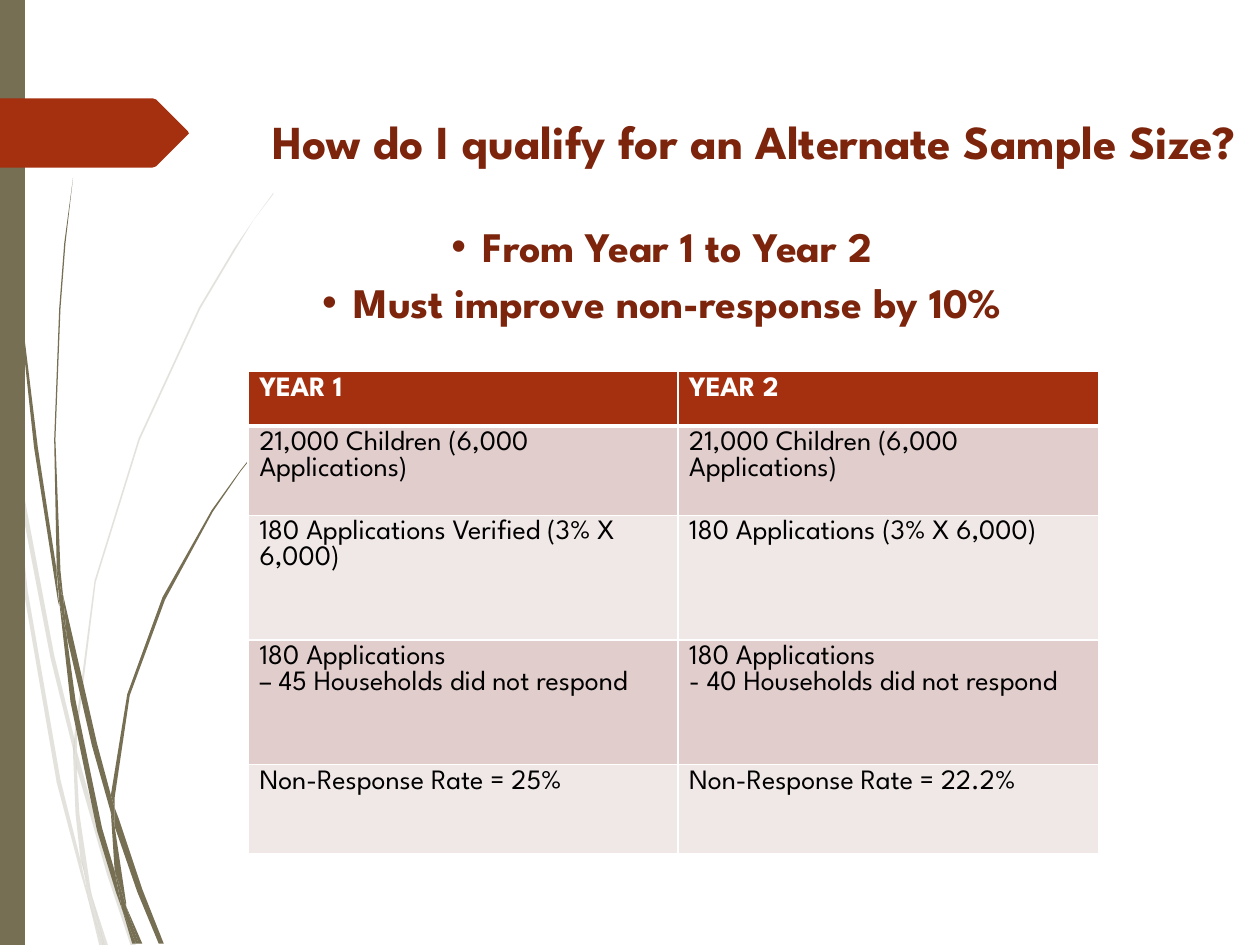
import pptx
import pptx.util
import pptx.dml.color
import pptx.enum.text
import pptx.oxml
import pptx.oxml.ns

PX = 9144  # one px is a hundredth of an inch

THEME = {
    "font": "League Spartan",
    "title": 27, "list": 24, "cell": 16,
    "olive": "766F54", "rust": "A53010", "dark": "7C240C",
    "white": "FFFFFF", "black": "000000",
    "bands": ("E1CDCC", "F0E8E7"),
}

# Content
TITLE = "How do I qualify for an Alternate Sample Size?"
POINTS = ["From Year 1 to Year 2", "Must improve non-response by 10%"]
ROWS = [
    ("YEAR 1", "YEAR 2"),
    ("21,000 Children (6,000 Applications)",
     "21,000 Children (6,000 Applications)"),
    ("180 Applications Verified (3% X 6,000)", "180 Applications (3% X 6,000)"),
    ("180 Applications\n– 45 Households did not respond",
     "180 Applications\n- 40 Households did not respond"),
    ("Non-Response Rate = 25%", "Non-Response Rate = 22.2%"),
]

# Layout: left, top, width, height
TITLE_BOX = (100, 72, 891, 167)
LIST_BOX = (208, 136, 648, 167)
GRID_AT = (197, 295)
COLS = (341, 334)
HEIGHTS = (43, 71, 99, 99, 71)
BAR = [(0, 0), (20, 0), (20, 750), (0, 750)]
ARROW = [(0, 78), (121, 78), (124, 79), (149, 104), (150, 105.5),
         (149, 107), (124, 132), (121, 133), (0, 133)]

# Outlines of the grass blades, by knots
PALE = [
    [(8, 350), (6, 322), (0, 282), (0, 299), (7, 344)],
    [(40, 522), (59, 599), (59, 586), (43, 520), (10, 345), (12, 376)],
    [(64, 607), (61, 596), (61, 610), (85, 694), (104, 751), (108, 751),
     (88, 692)],
    [(83, 751), (86, 751), (73, 711)],
    [(64, 683), (48, 619), (22, 469), (12, 376), (8, 350), (19, 470),
     (45, 621), (64, 693), (70, 714), (69, 707)],
    [(58, 599), (60, 646), (64, 683), (67, 692), (73, 711), (72, 706),
     (63, 646), (61, 610), (61, 608)],
    [(61, 584), (76, 462), (111, 349), (159, 245), (187, 198), (201, 175),
     (217, 154), (217, 153), (201, 175), (186, 197), (158, 244), (110, 348),
     (75, 461), (59, 584), (59, 586), (61, 596)],
    [(70, 714), (79, 751), (82, 751)],
    [(61, 608), (61, 610), (61, 596), (59, 586), (58, 599)],
    [(67, 692), (65, 683), (69, 707), (70, 714), (82, 751), (83, 751),
     (73, 711)],
]
DEEP = [
    [(5, 110), (14, 233), (27, 355), (46, 477), (47, 481), (45, 457),
     (45, 453), (30, 355), (15, 232), (6, 109), (4, 48), (3, 0), (2, 0),
     (3, 48)],
    [(73, 592), (88, 645), (88, 633), (88, 631), (77, 590), (50, 472),
     (53, 505)],
    [(94, 649), (91, 641), (91, 656), (109, 708), (126, 749), (130, 749),
     (113, 706)],
    [(91, 691), (81, 657), (60, 556), (53, 505), (47, 477), (56, 557),
     (77, 659), (92, 708), (97, 722), (96, 717)],
    [(50, 472), (48, 453), (44, 349), (48, 245), (52, 193), (58, 141),
     (51, 193), (47, 245), (43, 349), (45, 449), (49, 472)],
    [(110, 749), (113, 749), (100, 719)],
    [(47, 477), (53, 505), (50, 472), (49, 472), (45, 449), (45, 453)],
    [(91, 633), (103, 552), (131, 476), (169, 406), (191, 374), (203, 359),
     (216, 344), (215, 344), (203, 358), (191, 373), (168, 405), (129, 474),
     (101, 551), (88, 631), (91, 641)],
    [(97, 722), (105, 749), (108, 749)],
    [(88, 645), (91, 691), (96, 706), (100, 719), (100, 716), (91, 656),
     (90, 651)],
    [(88, 645), (90, 651), (91, 656), (91, 641), (88, 631), (88, 633)],
    [(96, 706), (91, 691), (96, 717), (97, 722), (108, 749), (110, 749),
     (100, 719)],
]


def rgb(code):
    return pptx.dml.color.RGBColor.from_string(code)


def xml(tag, attrs="", inner=""):
    space = pptx.oxml.ns.nsdecls("a")
    return pptx.oxml.parse_xml(f"<a:{tag} {space} {attrs}>{inner}</a:{tag}>")


def outline(slide, knots, color, alpha=None):
    pen = slide.shapes.build_freeform(*knots[0], scale=PX)
    pen.add_line_segments(knots[1:], close=True)
    shape = pen.convert_to_shape()
    shape.shadow.inherit = False
    shape.line.fill.background()
    shape.fill.solid()
    shape.fill.fore_color.rgb = rgb(color)
    if alpha:
        tint = shape.fill._xPr.find(".//" + pptx.oxml.ns.qn("a:srgbClr"))
        tint.append(xml("alpha", f'val="{alpha * 1000}"'))


def place(shape, box):
    shape.left, shape.top, shape.width, shape.height = (n * PX for n in box)


def style(para, size, color, bold=True):
    for run in para.runs:
        font = run.font
        font.name, font.size, font.bold = (
            THEME["font"], pptx.util.Pt(size), bold)
        font.color.rgb = rgb(color)


def add_title(slide):
    shape = slide.shapes.title
    place(shape, TITLE_BOX)
    frame = shape.text_frame
    frame.text = TITLE
    frame.word_wrap = True
    frame.vertical_anchor = pptx.enum.text.MSO_ANCHOR.TOP
    frame.margin_top = 17 * PX
    para = frame.paragraphs[0]
    para.alignment = pptx.enum.text.PP_ALIGN.RIGHT
    style(para, THEME["title"], THEME["dark"])


def add_list(slide):
    shape = slide.placeholders[1]
    place(shape, LIST_BOX)
    frame = shape.text_frame
    frame.text = "\n".join(POINTS)
    frame.vertical_anchor = pptx.enum.text.MSO_ANCHOR.MIDDLE
    for para in frame.paragraphs:
        para.alignment = pptx.enum.text.PP_ALIGN.CENTER
        para.line_spacing = 0.9
        para.space_before = pptx.util.Pt(0)
        para.space_after = pptx.util.Pt(6)
        props = para._p.get_or_add_pPr()
        props.set("marL", "0")
        props.set("indent", str(-25 * PX))
        props.append(xml("buFont", 'typeface="Arial"'))
        props.append(xml("buChar", 'char="•"'))
        style(para, THEME["list"], THEME["dark"])


def edge(cell, head):
    props = cell._tc.get_or_add_tcPr()
    paint = f'<a:solidFill><a:srgbClr val="{THEME["white"]}"/></a:solidFill>'
    for spot, side in enumerate("LRTB"):
        width = 3 if head and side == "B" else 1
        props.insert(spot, xml("ln" + side, f'w="{width * 12700}"', paint))


def add_grid(slide):
    box = (*GRID_AT, sum(COLS), sum(HEIGHTS))
    table = slide.shapes.add_table(
        len(ROWS), len(COLS), *(n * PX for n in box)).table
    for col, width in zip(table.columns, COLS):
        col.width = width * PX
    for r, texts in enumerate(ROWS):
        table.rows[r].height = HEIGHTS[r] * PX
        head = r == 0
        fill = THEME["rust"] if head else THEME["bands"][(r - 1) % 2]
        ink = THEME["white"] if head else THEME["black"]
        for c, text in enumerate(texts):
            cell = table.cell(r, c)
            cell.text_frame.text = text
            cell.margin_left = cell.margin_right = 9 * PX
            cell.margin_top = cell.margin_bottom = 4 * PX
            cell.fill.solid()
            cell.fill.fore_color.rgb = rgb(fill)
            edge(cell, head)
            for para in cell.text_frame.paragraphs:
                style(para, THEME["cell"], ink, head)


def main():
    deck = pptx.Presentation()
    deck.slide_width, deck.slide_height = 1000 * PX, 750 * PX
    slide = deck.slides.add_slide(deck.slide_layouts[1])
    # Side decoration
    for knots in PALE:
        outline(slide, knots, THEME["olive"], 20)
    for knots in DEEP:
        outline(slide, knots, THEME["olive"])
    outline(slide, BAR, THEME["olive"])
    outline(slide, ARROW, THEME["rust"])
    # Text and table
    add_title(slide)
    add_list(slide)
    add_grid(slide)
    deck.save("out.pptx")


if __name__ == "__main__":
    main()
